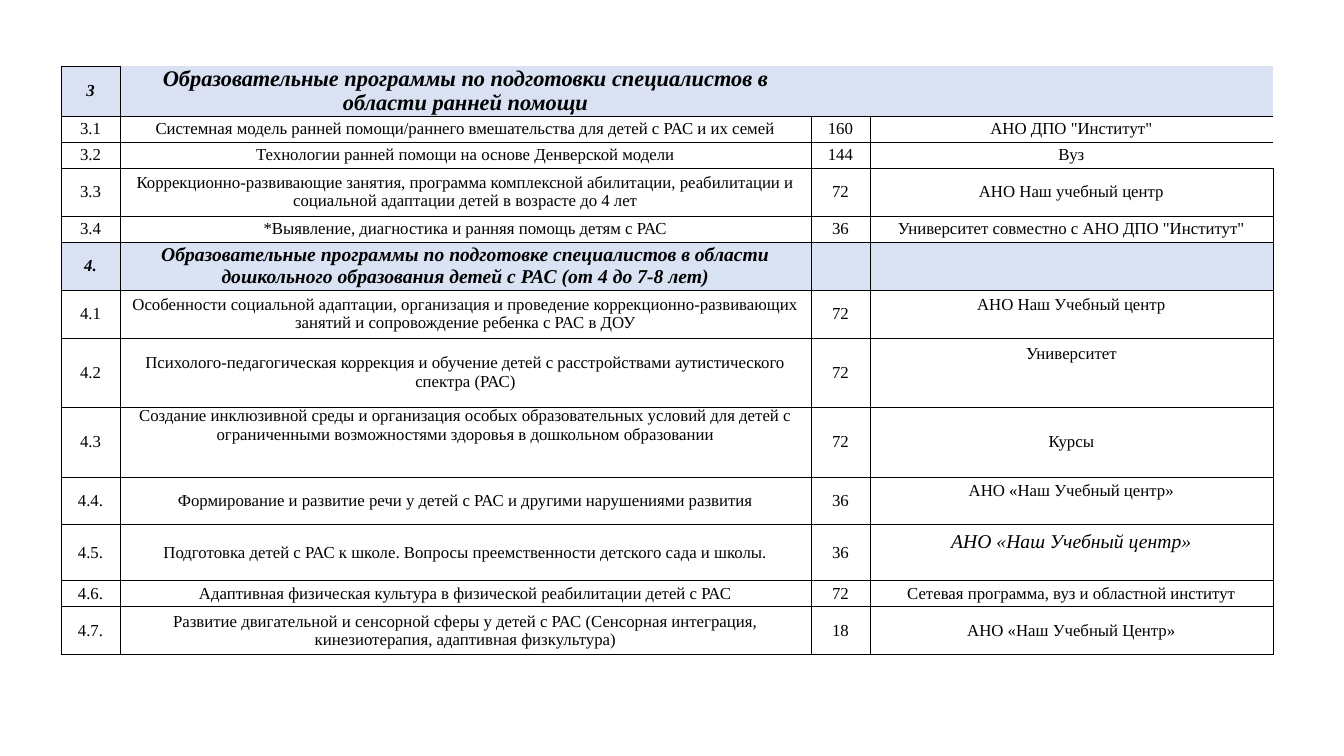
from dataclasses import dataclass

from lxml import etree
from pptx import Presentation
from pptx.dml.color import RGBColor
from pptx.enum.text import MSO_ANCHOR, PP_ALIGN
from pptx.oxml.ns import qn
from pptx.table import _Cell
from pptx.util import Pt

CENTER = PP_ALIGN.CENTER
MIDDLE = MSO_ANCHOR.MIDDLE
TOP = MSO_ANCHOR.TOP

EMU_PER_PX = 914400 / 100.8
FONT = "Times New Roman"
BLACK = RGBColor(0x00, 0x00, 0x00)
NUMBER_BLUE = RGBColor(0xD9, 0xE1, 0xF2)
SECTION_BLUE = RGBColor(0xDA, 0xE3, 0xF3)
BORDER_WIDTH = Pt(0.5)
SIDES = "LRTB"

SLIDE_WIDTH, SLIDE_HEIGHT = 1344, 756
TABLE_LEFT, TABLE_TOP = 61, 66
COLUMN_WIDTHS = (59, 691, 59, 403)


@dataclass(frozen=True)
class Entry:
    """One cell text; lift is the space kept free below it, in px."""
    text: str = ""
    size: int = 12
    bold: bool = False
    italic: bool = False
    anchor: MSO_ANCHOR = MIDDLE
    lift: int = 0


@dataclass(frozen=True)
class Row:
    height: int
    entries: tuple[Entry, ...]
    fills: tuple[RGBColor | None, ...] = (None,) * 4
    borders: tuple[str, ...] = (SIDES,) * 4


def section(height: int, number: str, title: str, title_size: int,
            fill: RGBColor, borders: tuple[str, ...] = (SIDES,) * 4) -> Row:
    """A tinted heading row."""
    entries = (Entry(number, bold=True, italic=True),
               Entry(title, title_size, bold=True, italic=True),
               Entry(), Entry())
    return Row(height, entries, (NUMBER_BLUE, fill, fill, fill), borders)


def program(height: int, number: str, title: str | Entry, hours: int,
            provider: str | Entry, open_right: bool = False) -> Row:
    """A plain row for one training program."""
    values = (number, title, str(hours), provider)
    entries = tuple(v if isinstance(v, Entry) else Entry(v) for v in values)
    last_borders = "LTB" if open_right else SIDES
    return Row(height, entries, borders=(SIDES,) * 3 + (last_borders,))


ROWS = (
    section(50, "3", "Образовательные программы по подготовки специалистов в "
            "области ранней помощи", 16, NUMBER_BLUE, (SIDES, "LB", "B", "B")),
    program(26, "3.1", "Системная модель ранней помощи/раннего вмешательства "
            "для детей с РАС и их семей", 160, 'АНО ДПО "Институт"', True),
    program(26, "3.2", "Технологии ранней помощи на основе Денверской модели",
            144, "Вуз", True),
    program(48, "3.3", "Коррекционно-развивающие занятия, программа комплексной "
            "абилитации, реабилитации и социальной адаптации детей в возрасте "
            "до 4 лет", 72, "АНО Наш учебный центр"),
    program(26, "3.4", "*Выявление, диагностика и ранняя помощь детям с РАС",
            36, 'Университет совместно с АНО ДПО "Институт"'),
    section(48, "4.", "Образовательные программы по подготовке специалистов в "
            "области дошкольного образования детей с РАС (от 4 до 7-8 лет)",
            14, SECTION_BLUE),
    program(48, "4.1", "Особенности социальной адаптации, организация и "
            "проведение коррекционно-развивающих занятий и сопровождение "
            "ребенка с РАС в ДОУ", 72, Entry("АНО Наш Учебный центр", lift=19)),
    program(69, "4.2", "Психолого-педагогическая коррекция и обучение детей с "
            "расстройствами аутистического спектра (РАС)", 72,
            Entry("Университет", lift=37)),
    program(70, "4.3", Entry("Создание инклюзивной среды и организация особых "
            "образовательных условий для детей с ограниченными возможностями "
            "здоровья в дошкольном образовании", anchor=TOP), 72, "Курсы"),
    program(48, "4.4.", "Формирование и развитие речи у детей с РАС и другими "
            "нарушениями развития", 36, Entry("АНО «Наш Учебный центр»", lift=19)),
    program(56, "4.5.", "Подготовка детей с РАС к школе. Вопросы "
            "преемственности детского сада и школы.", 36,
            Entry("АНО «Наш Учебный центр»", 14, italic=True, lift=22)),
    program(26, "4.6.", "Адаптивная физическая культура в физической "
            "реабилитации детей с РАС", 72,
            "Сетевая программа, вуз и областной институт"),
    program(48, "4.7.", "Развитие двигательной и сенсорной сферы у детей с РАС "
            "(Сенсорная интеграция, кинезиотерапия, адаптивная физкультура)",
            18, "АНО «Наш Учебный Центр»"),
)


def px(length: int) -> int:
    return round(length * EMU_PER_PX)


def set_borders(cell: _Cell, drawn_sides: str) -> None:
    properties = cell._tc.get_or_add_tcPr()
    for side in SIDES:
        line = etree.SubElement(properties, qn(f"a:ln{side}"), w=str(BORDER_WIDTH))
        if side in drawn_sides:
            fill = etree.SubElement(line, qn("a:solidFill"))
            etree.SubElement(fill, qn("a:srgbClr"), val=str(BLACK))
        else:
            etree.SubElement(line, qn("a:noFill"))


def fill_cell(cell: _Cell, entry: Entry, fill: RGBColor | None, borders: str) -> None:
    # Borders come before the fill in the cell properties
    set_borders(cell, borders)
    if fill is None:
        cell.fill.background()
    else:
        cell.fill.solid()
        cell.fill.fore_color.rgb = fill

    cell.margin_left = cell.margin_right = cell.margin_top = 0
    cell.margin_bottom = px(entry.lift)
    cell.vertical_anchor = entry.anchor
    cell.text = entry.text
    paragraph = cell.text_frame.paragraphs[0]
    paragraph.alignment = CENTER
    font = paragraph.font
    font.name = FONT
    font.size = Pt(entry.size)
    font.bold = entry.bold
    font.italic = entry.italic
    font.color.rgb = BLACK


def main() -> None:
    presentation = Presentation()
    presentation.slide_width = px(SLIDE_WIDTH)
    presentation.slide_height = px(SLIDE_HEIGHT)
    slide = presentation.slides.add_slide(presentation.slide_layouts[6])

    # Table of training programs
    table = slide.shapes.add_table(
        len(ROWS), len(COLUMN_WIDTHS), px(TABLE_LEFT), px(TABLE_TOP),
        px(sum(COLUMN_WIDTHS)), px(sum(row.height for row in ROWS))).table
    table.first_row = table.horz_banding = False
    for column, width in zip(table.columns, COLUMN_WIDTHS):
        column.width = px(width)
    for table_row, row in zip(table.rows, ROWS):
        table_row.height = px(row.height)
        for cell, entry, fill, borders in zip(
                table_row.cells, row.entries, row.fills, row.borders):
            fill_cell(cell, entry, fill, borders)

    presentation.save("out.pptx")


if __name__ == "__main__":
    main()
